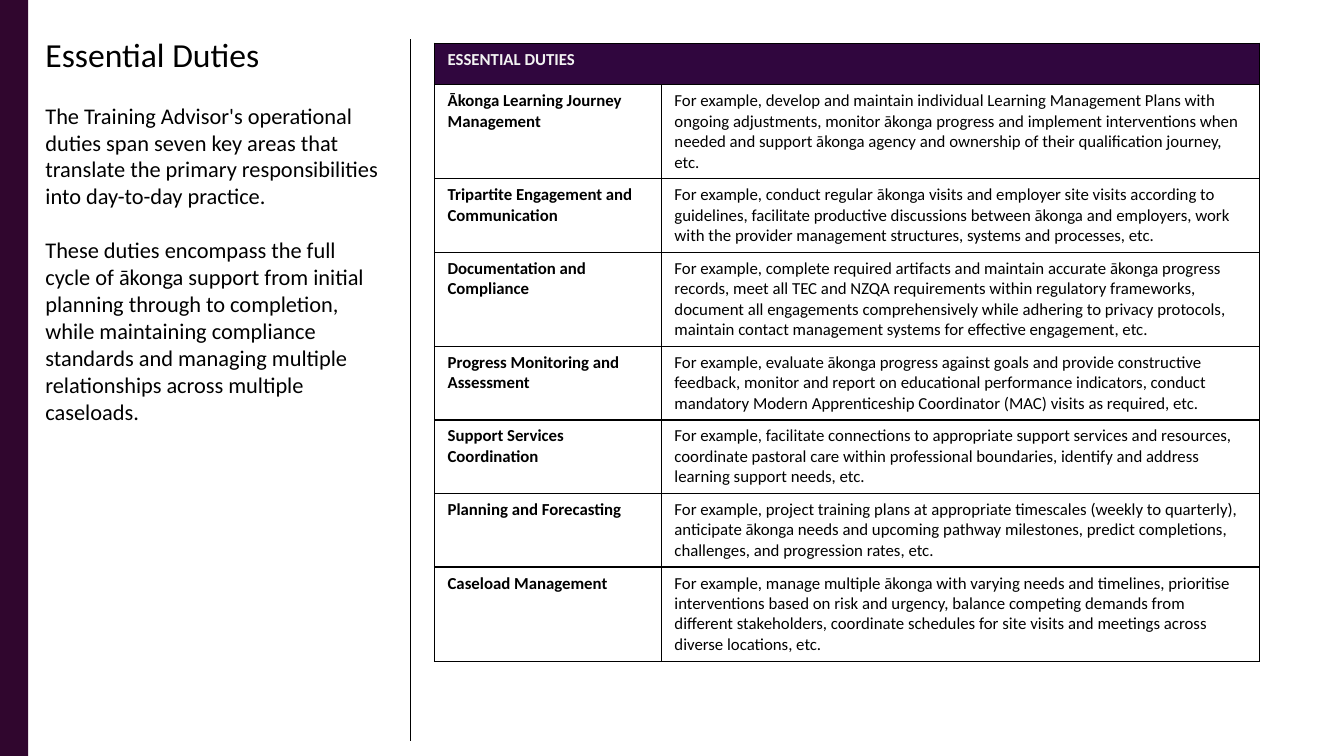
"""Build the Essential Duties slide."""
from dataclasses import dataclass

from lxml.etree import SubElement as Sub
from pptx import Presentation as Deck
from pptx.dml.color import RGBColor as Rgb
from pptx.enum.shapes import MSO_CONNECTOR as Link, MSO_SHAPE as Form
from pptx.oxml.ns import qn
from pptx.util import Emu, Inches, Pt

FONT, BLACK, PALE, PLUM, HEAD = "Calibri", "000000", "F2F2F2", "30062E", "30063E"
HEAD_ROW = 5.47
ROW = {3: 9.73, 4: 12.45}


@dataclass
class Box:
    left: float
    top: float
    width: float
    height: float


@dataclass
class Text:
    words: str
    size: float
    bold: bool = False
    tint: str = BLACK
    gap: float = 0


@dataclass
class Duty:
    name: str
    lines: int
    detail: str


BAR = Box(0, 0, 2.1, 100)
NOTE = Box(3.38, 4.53, 25.13, 52)
GRID = Box(32.33, 5.73, 61.36, 81.8)
COLS = (16.88, 44.48)
RULE = Box(30.53, 5.2, 0, 92.8)

NOTES = [
    Text("Essential Duties", 24),
    Text("The Training Advisor's operational duties span seven key areas that translate "
         "the primary responsibilities into day-to-day practice.", 16, gap=19.5),
    Text("These duties encompass the full cycle of ākonga support from initial planning "
         "through to completion, while maintaining compliance standards and managing "
         "multiple relationships across multiple caseloads.", 16, gap=19.5),
]

DUTIES = [
    Duty("Ākonga Learning Journey Management", 4,
         "For example, develop and maintain individual Learning Management Plans with "
         "ongoing adjustments, monitor ākonga progress and implement interventions when "
         "needed and support ākonga agency and ownership of their qualification journey, etc."),
    Duty("Tripartite Engagement and Communication", 3,
         "For example, conduct regular ākonga visits and employer site visits according to "
         "guidelines, facilitate productive discussions between ākonga and employers, work "
         "with the provider management structures, systems and processes, etc."),
    Duty("Documentation and Compliance", 4,
         "For example, complete required artifacts and maintain accurate ākonga progress "
         "records, meet all TEC and NZQA requirements within regulatory frameworks, "
         "document all engagements comprehensively while adhering to privacy protocols, "
         "maintain contact management systems for effective engagement, etc."),
    Duty("Progress Monitoring and Assessment", 3,
         "For example, evaluate ākonga progress against goals and provide constructive "
         "feedback, monitor and report on educational performance indicators, conduct "
         "mandatory Modern Apprenticeship Coordinator (MAC) visits as required, etc."),
    Duty("Support Services Coordination", 3,
         "For example, facilitate connections to appropriate support services and resources, "
         "coordinate pastoral care within professional boundaries, identify and address "
         "learning support needs, etc."),
    Duty("Planning and Forecasting", 3,
         "For example, project training plans at appropriate timescales (weekly to quarterly), "
         "anticipate ākonga needs and upcoming pathway milestones, predict completions, "
         "challenges, and progression rates, etc."),
    Duty("Caseload Management", 4,
         "For example, manage multiple ākonga with varying needs and timelines, prioritise "
         "interventions based on risk and urgency, balance competing demands from "
         "different stakeholders, coordinate schedules for site visits and meetings across "
         "diverse locations, etc."),
]

deck = Deck()
deck.slide_width, deck.slide_height = Inches(13.33), Inches(7.5)
slide = deck.slides.add_slide(deck.slide_layouts[6])


def across(share: float) -> Emu:
    """Turn a percentage of the slide's width into a length."""
    return Emu(round(deck.slide_width * share / 100))


def down(share: float) -> Emu:
    """Turn a percentage of the slide's height into a length."""
    return Emu(round(deck.slide_height * share / 100))


def place(box: Box) -> tuple:
    """Give the left, top, width and height of a box."""
    return across(box.left), down(box.top), across(box.width), down(box.height)


def hue(code: str) -> Rgb:
    """Turn a hex string into a colour."""
    return Rgb.from_string(code)


def apply(item, values: dict) -> None:
    """Set each named value on an item."""
    for key, value in values.items():
        setattr(item, key, value)


def write(frame, texts: list) -> None:
    """Write one paragraph for each text."""
    frame.word_wrap = True
    for count, text in enumerate(texts):
        para = frame.add_paragraph() if count else frame.paragraphs[0]
        para.space_before = Pt(text.gap)
        run = para.add_run()
        run.text = text.words
        apply(run.font, {"name": FONT, "size": Pt(text.size), "bold": text.bold})
        run.font.color.rgb = hue(text.tint)


def edge(cell) -> None:
    """Rule all four sides of a cell."""
    props = cell._tc.get_or_add_tcPr()
    for side in ("a:lnL", "a:lnR", "a:lnT", "a:lnB"):
        line = Sub(props, qn(side), w=str(Pt(1)))
        Sub(Sub(line, qn("a:solidFill")), qn("a:srgbClr"), val=BLACK)


def fill(cell, text: Text, back: str = "") -> None:
    """Write a cell and colour its back."""
    apply(cell, {"margin_left": Inches(0.13), "margin_right": Inches(0.13),
                 "margin_top": Inches(0.06), "margin_bottom": Inches(0.06)})
    write(cell.text_frame, [text])
    if back:
        cell.fill.solid()
        cell.fill.fore_color.rgb = hue(back)
    else:
        cell.fill.background()


def draw_bar() -> None:
    """Draw the plum bar on the left edge."""
    bar = slide.shapes.add_shape(Form.RECTANGLE, *place(BAR))
    bar.shadow.inherit = False
    bar.fill.solid()
    bar.fill.fore_color.rgb = hue(PLUM)
    bar.line.fill.background()


def draw_note() -> None:
    """Draw the heading and its text."""
    frame = slide.shapes.add_textbox(*place(NOTE)).text_frame
    apply(frame, dict.fromkeys(
        ("margin_left", "margin_right", "margin_top", "margin_bottom"), 0))
    write(frame, NOTES)


def draw_grid() -> None:
    """Draw the table of duties."""
    table = slide.shapes.add_table(len(DUTIES) + 1, len(COLS), *place(GRID)).table
    apply(table, {"first_row": False, "horz_banding": False})
    for col, share in zip(table.columns, COLS):
        col.width = across(share)
    for cell in table.iter_cells():
        edge(cell)
    table.rows[0].height = down(HEAD_ROW)
    table.cell(0, 0).merge(table.cell(0, 1))
    fill(table.cell(0, 0), Text("ESSENTIAL DUTIES", 12, True, PALE), HEAD)
    for row, duty in enumerate(DUTIES, 1):
        table.rows[row].height = down(ROW[duty.lines])
        fill(table.cell(row, 0), Text(duty.name, 12, True))
        fill(table.cell(row, 1), Text(duty.detail, 12))


def draw_rule() -> None:
    """Draw the upright line between text and table."""
    left, top, width, height = place(RULE)
    rule = slide.shapes.add_connector(Link.STRAIGHT, left, top, left + width, top + height)
    rule.line.color.rgb = hue(BLACK)
    rule.line.width = Pt(0.75)
    Sub(rule._element.spPr, qn("a:effectLst"))


for draw in (draw_bar, draw_note, draw_grid, draw_rule):
    draw()
deck.save("out.pptx")
